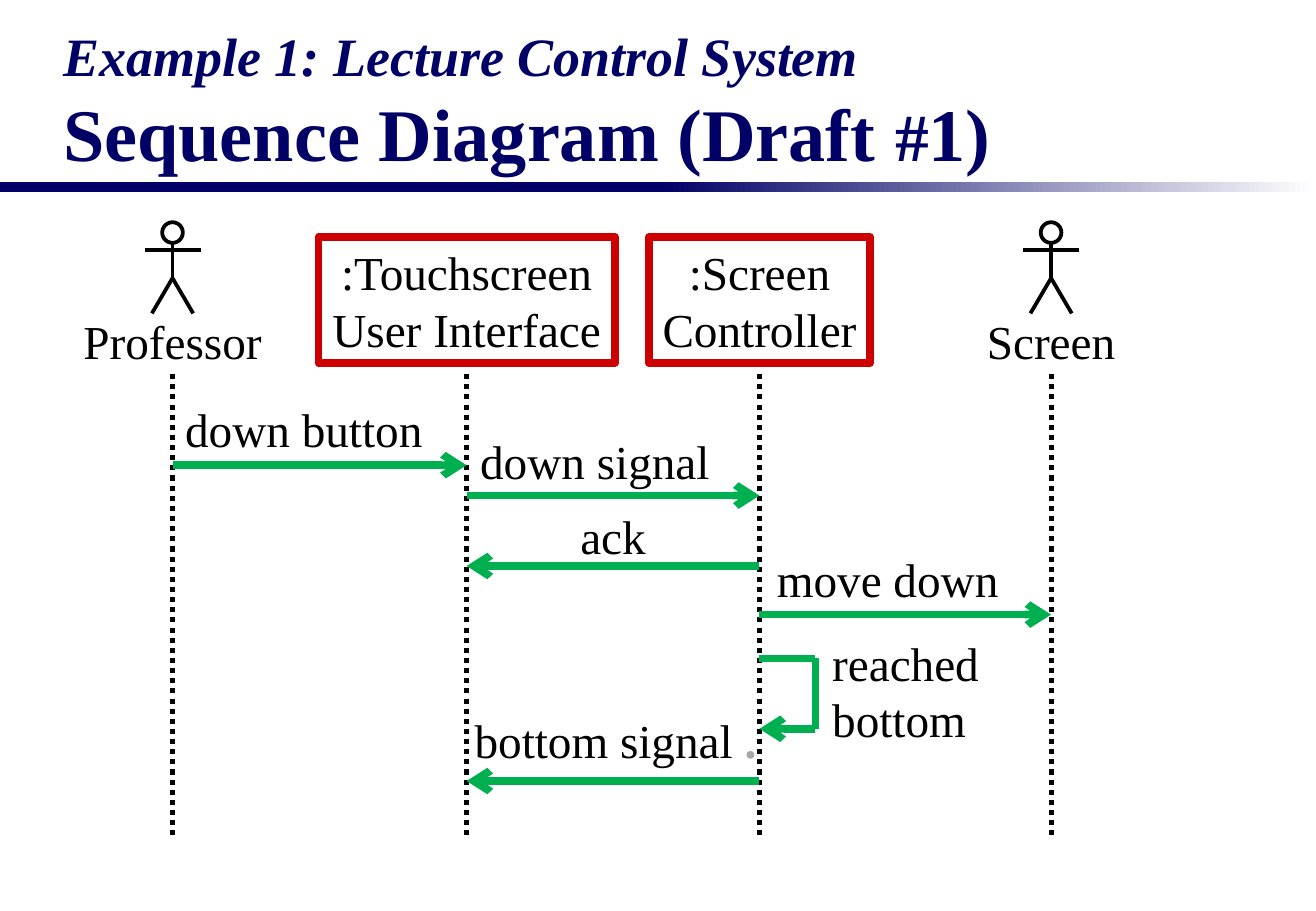
from pptx import Presentation
from pptx.dml.color import RGBColor
from pptx.enum import dml, shapes, text
from pptx.oxml.ns import qn
from pptx.util import Inches, Pt
from lxml import etree

NAVY = RGBColor(0x00, 0x00, 0x66)
WHITE = RGBColor(0xFF, 0xFF, 0xFF)
BLACK = RGBColor(0x00, 0x00, 0x00)
RED = RGBColor(0xCC, 0x00, 0x00)
GREEN = RGBColor(0x00, 0xB0, 0x50)
GREY = RGBColor(0xA6, 0xA6, 0xA6)
FONT = "Times New Roman"

WIDTH, HEIGHT = 10.83, 7.5
SUBTITLE = "Example 1: Lecture Control System"
TITLE = [("Sequence Diagram (Draft ", 44), ("#", 40), ("1)", 44)]
LIFELINES = {"professor": 1.42, "interface": 3.84, "controller": 6.25, "screen": 8.65}
LIFE_TOP, LIFE_BOTTOM = 3.08, 6.88
ACTORS = [("Professor", "professor", 1.67), ("Screen", "screen", 1.27)]
OBJECTS = [
    ((":Touchscreen", "User Interface"), "interface", 2.44),
    ((":Screen", "Controller"), "controller", 1.82),
]
MESSAGES = [
    ([("down button", BLACK)], "professor", "interface", 3.83, (1.41, 3.25, 2.18)),
    ([("down signal", BLACK)], "interface", "controller", 4.08, (3.84, 3.51, 2.11)),
    ([("ack", BLACK)], "controller", "interface", 4.66, (4.67, 4.13, 0.75)),
    ([("move down", BLACK)], "controller", "screen", 5.06, (6.28, 4.48, 2.05)),
    ([("bottom signal ", BLACK), (".", GREY)], "controller", "interface", 6.43,
     (3.79, 5.81, 2.55)),
]
SELF_MESSAGE = "reached bottom"
SELF_TOP, SELF_BOTTOM, SELF_OUT = 5.42, 6.0, 0.46


def add_run(p, words, size=28, color=BLACK, bold=None, italic=None):
    """Append one formatted run to a paragraph."""
    r = p.add_run()
    r.text = words
    r.font.name, r.font.size = FONT, Pt(size)
    r.font.color.rgb = color
    r.font.bold, r.font.italic = bold, italic


def add_line(parent, x1, y1, x2, y2, color, weight, dash=None, arrow=False):
    """Draw a straight line, optionally dotted or ending in an open arrow."""
    c = parent.add_connector(shapes.MSO_CONNECTOR.STRAIGHT, *map(Inches, (x1, y1, x2, y2)))
    c.line.color.rgb, c.line.width = color, Pt(weight)
    if dash:
        c.line.dash_style = dash
    if arrow:
        etree.SubElement(c.line._get_or_add_ln(), qn("a:tailEnd"), type="arrow")
    etree.SubElement(c._element.spPr, qn("a:effectLst"))


def add_figure(parent, kind, x, y, w, h, color=None, weight=None):
    """Add an unfilled preset shape, outlined when a colour is given."""
    sp = parent.add_shape(kind, *map(Inches, (x, y, w, h)))
    sp.shadow.inherit = False
    sp.fill.background()
    if color is None:
        sp.line.fill.background()
    else:
        sp.line.color.rgb, sp.line.width = color, Pt(weight)
    return sp


def add_label(s, runs, x, y, w, h=0.57, wrap=False, align=text.PP_ALIGN.CENTER):
    """Add a text box holding one paragraph of coloured runs."""
    tf = s.shapes.add_textbox(*map(Inches, (x, y, w, h))).text_frame
    tf.word_wrap = wrap
    p = tf.paragraphs[0]
    p.alignment = align
    for words, color in runs:
        add_run(p, words, color=color, bold=True if color == GREY else None)


def add_title(s):
    """Fill the title and draw the rule below it."""
    half = WIDTH / 2
    solid, fade = [add_figure(s.shapes, shapes.MSO_SHAPE.RECTANGLE, x, 1.5, half, 0.08)
                   for x in (0, half)]
    solid.fill.solid()
    solid.fill.fore_color.rgb = NAVY
    fade.fill.gradient()
    fade.fill.gradient_angle = 0
    for stop, color in zip(fade.fill.gradient_stops, (NAVY, WHITE)):
        stop.color.rgb = color
    sp = s.shapes.title
    sp.left, sp.top, sp.width, sp.height = map(Inches, (0.42, 0.29, 10, 1.21))
    tf = sp.text_frame
    tf.auto_size = text.MSO_AUTO_SIZE.NONE
    tf.vertical_anchor = text.MSO_ANCHOR.BOTTOM
    p = tf.paragraphs[0]
    p.alignment = text.PP_ALIGN.LEFT
    add_run(p, SUBTITLE, 32, NAVY, True, True)
    p.add_line_break()
    for words, size in TITLE:
        add_run(p, words, size, NAVY, True, False)


def add_actor(s, name, x, w):
    """Draw a stick figure with its name below."""
    grp = s.shapes.add_group_shape().shapes
    for x1, y1, x2, y2 in [(-0.17, 2.58, 0, 2.29), (0.17, 2.58, 0, 2.29),
                           (0, 2.29, 0, 2.01), (-0.23, 2.06, 0.23, 2.06)]:
        add_line(grp, x + x1, y1, x + x2, y2, BLACK, 2.25)
    add_figure(grp, shapes.MSO_SHAPE.OVAL, x - 0.085, 1.83, 0.17, 0.17, BLACK, 2.25)
    add_label(s, [(name, BLACK)], x - w / 2, 2.52, w)


def add_object(s, lines, x, w):
    """Draw an object box with one centred paragraph per line."""
    sp = add_figure(s.shapes, shapes.MSO_SHAPE.RECTANGLE, x - w / 2, 1.95, w, 1.04, RED, 4.5)
    tf = sp.text_frame
    tf.word_wrap = False
    for i, words in enumerate(lines):
        p = tf.add_paragraph() if i else tf.paragraphs[0]
        p.alignment = text.PP_ALIGN.CENTER
        add_run(p, words)


def main():
    """Build the sequence diagram slide."""
    prs = Presentation()
    prs.slide_width, prs.slide_height = Inches(WIDTH), Inches(HEIGHT)
    s = prs.slides.add_slide(prs.slide_layouts[5])
    add_title(s)
    for x in LIFELINES.values():
        add_line(s.shapes, x, LIFE_TOP, x, LIFE_BOTTOM, BLACK, 3, dml.MSO_LINE.ROUND_DOT)
    for name, key, w in ACTORS:
        add_actor(s, name, LIFELINES[key], w)
    for lines, key, w in OBJECTS:
        add_object(s, lines, LIFELINES[key], w)
    for runs, start, end, y, place in MESSAGES:
        add_line(s.shapes, LIFELINES[start], y, LIFELINES[end], y, GREEN, 4.5, arrow=True)
        add_label(s, runs, *place)
    x = LIFELINES["controller"]
    turn = x + SELF_OUT
    loop = s.shapes.add_group_shape().shapes
    add_line(loop, x, SELF_TOP, turn, SELF_TOP, GREEN, 4.5)
    add_line(loop, turn, SELF_TOP, turn, SELF_BOTTOM, GREEN, 4.5)
    add_line(loop, turn, SELF_BOTTOM, x, SELF_BOTTOM, GREEN, 4.5, arrow=True)
    add_label(s, [(SELF_MESSAGE, BLACK)], 6.75, 5.17, 1.45, 1.04, True, text.PP_ALIGN.LEFT)
    prs.save("out.pptx")


if __name__ == "__main__":
    main()
